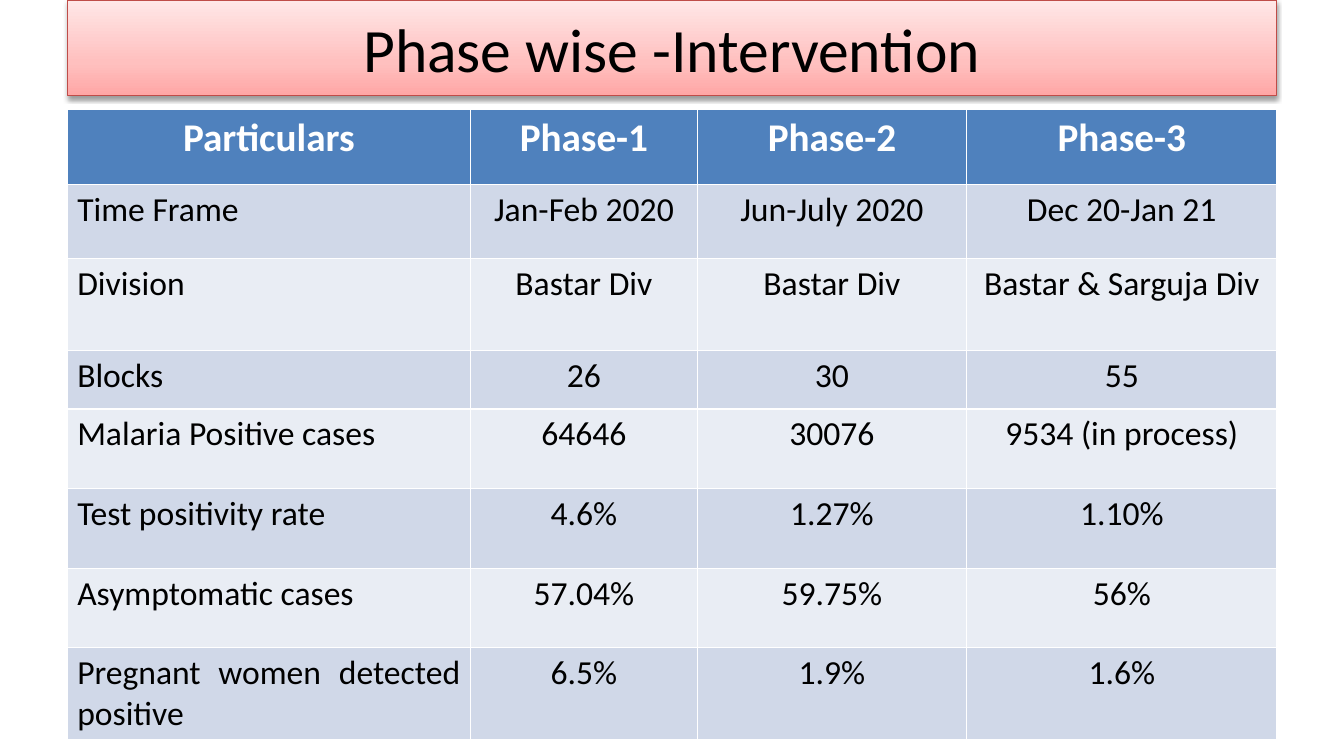
from lxml.etree import fromstring
from pptx import Presentation
from pptx.dml.color import RGBColor as RGB
from pptx.enum.text import MSO_ANCHOR as Anchor, PP_ALIGN as Align
from pptx.util import Inches, Pt

WIDE, HIGH = 13.33, 7.5
NS = "http://schemas.openxmlformats.org/drawingml/2006/main"
HUES = {
    "ink": "000000", "white": "FFFFFF", "edge": "BF4C48",
    "head": "4F81BD", "odd": "D0D8E8", "even": "E9EDF4",
    "deep": "FFA6A5", "mid": "FFC0BF", "pale": "FFE7E7",
}
COLS = [4, 2.25, 2.67, 3.08]
ROWS = [0.74, 0.74, 0.91, 0.58, 0.79, 0.79, 0.79, 0.91]
PHASES = [
    ["Particulars", "Phase-1", "Phase-2", "Phase-3"],
    ["Time Frame", "Jan-Feb 2020", "Jun-July 2020", "Dec 20-Jan 21"],
    ["Division", "Bastar Div", "Bastar Div", "Bastar & Sarguja Div"],
    ["Blocks", "26", "30", "55"],
    ["Malaria Positive cases", "64646", "30076", "9534 (in process)"],
    ["Test positivity rate", "4.6%", "1.27%", "1.10%"],
    ["Asymptomatic cases", "57.04%", "59.75%", "56%"],
    ["Pregnant women detected positive", "6.5%", "1.9%", "1.6%"],
]


class Deck:
    """Holds the style and the current slide; places are shares of its size."""

    font = "Calibri"

    def __init__(self):
        self.prs = Presentation()
        self.prs.slide_width, self.prs.slide_height = Inches(WIDE), Inches(HIGH)
        self.slide = self.prs.slides.add_slide(self.prs.slide_layouts[5])

    def box(self, x, y, w, h):
        return [Inches(WIDE * x), Inches(HIGH * y), Inches(WIDE * w), Inches(HIGH * h)]

    def label(self, frame, text, hue, align, **style):
        frame.text = text
        para = frame.paragraphs[0]
        para.alignment = align
        font = para.runs[0].font
        for name, value in {"name": self.font, **style}.items():
            setattr(font, name, value)
        font.color.rgb = RGB.from_string(HUES[hue])

    def title(self, text, place, stops):
        shape = self.slide.shapes.title
        for name, value in zip(("left", "top", "width", "height"), self.box(*place)):
            setattr(shape, name, value)
        frame = shape.text_frame
        self.label(frame, text, "ink", Align.CENTER, size=Pt(44))
        frame.vertical_anchor = Anchor.MIDDLE
        # Gradient, outline and soft shadow
        marks = "".join(
            f'<a:gs pos="{pos * 1000}"><a:srgbClr val="{HUES[hue]}"/></a:gs>'
            for pos, hue in stops)
        props = shape.element.spPr
        props.append(fromstring(
            f'<a:prstGeom xmlns:a="{NS}" prst="rect"><a:avLst/></a:prstGeom>'))
        props.append(fromstring(
            f'<a:gradFill xmlns:a="{NS}" rotWithShape="1"><a:gsLst>{marks}</a:gsLst>'
            '<a:lin ang="16200000" scaled="0"/></a:gradFill>'))
        shape.line.color.rgb = RGB.from_string(HUES["edge"])
        shape.line.width = Pt(0.75)
        props.append(fromstring(
            f'<a:effectLst xmlns:a="{NS}"><a:outerShdw blurRad="40000" dist="20000" '
            f'dir="5400000" rotWithShape="0"><a:srgbClr val="{HUES["ink"]}">'
            '<a:alpha val="38000"/></a:srgbClr></a:outerShdw></a:effectLst>'))

    def table(self, data, place, cols, rows):
        grid = self.slide.shapes.add_table(len(rows), len(cols), *self.box(*place)).table
        for col, width in zip(grid.columns, cols):
            col.width = Inches(width)
        for row, height in zip(grid.rows, rows):
            row.height = Inches(height)
        for r, line in enumerate(data):
            for c, text in enumerate(line):
                self.cell(grid.cell(r, c), text, r, c)

    def cell(self, cell, text, r, c):
        head = r == 0
        fill = "head" if head else "odd" if r % 2 else "even"
        cell.fill.solid()
        cell.fill.fore_color.rgb = RGB.from_string(HUES[fill])
        align = Align.CENTER if head or c else Align.JUSTIFY
        self.label(cell.text_frame, text, "white" if head else "ink", align,
                   size=Pt(28 if head else 24), bold=head)


def main():
    deck = Deck()
    # Title band
    deck.title("Phase wise -Intervention", (0.05, 0, 0.9, 0.127),
               [(0, "deep"), (35, "mid"), (100, "pale")])
    # Phase table
    deck.table(PHASES, (0.05, 0.145, 0.9, 0.833), COLS, ROWS)
    deck.prs.save("out.pptx")


if __name__ == "__main__":
    main()
